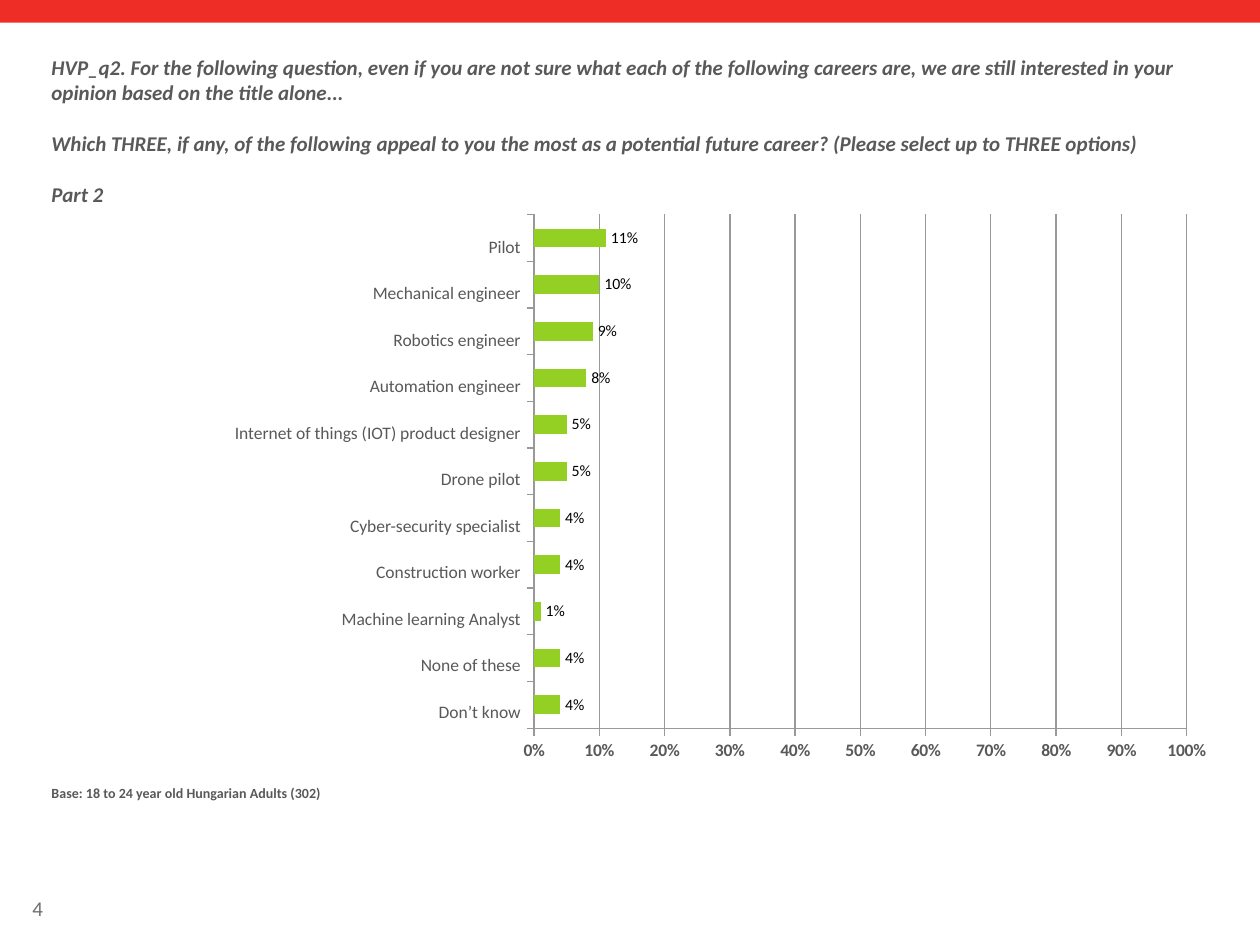
from collections import namedtuple

from lxml import etree
from pptx import Presentation
from pptx.chart.data import CategoryChartData
from pptx.dml.color import RGBColor
from pptx.enum.chart import XL_CHART_TYPE, XL_LABEL_POSITION, XL_TICK_LABEL_POSITION, XL_TICK_MARK
from pptx.enum.shapes import MSO_SHAPE
from pptx.enum.text import MSO_ANCHOR, PP_ALIGN
from pptx.oxml.ns import qn
from pptx.util import Inches, Pt

RED = RGBColor(0xEE, 0x2D, 0x27)
GREEN = RGBColor(0x93, 0xD0, 0x23)
TEXT_GREY = RGBColor(0x59, 0x59, 0x59)
NUMBER_GREY = RGBColor(0x6D, 0x6F, 0x71)
LINE_GREY = RGBColor(0x99, 0x99, 0x99)
BLACK = RGBColor(0, 0, 0)

Box = namedtuple("Box", "left top width height")

QUESTION = [
    "HVP_q2. For the following question, even if you are not sure what each of the "
    "following careers are, we are still interested in your opinion based on the title alone...",
    "Which THREE, if any, of the following appeal to you the most as a potential future "
    "career? (Please select up to THREE options)",
    "Part 2",
]
CAREERS = [
    ("Pilot", 0.11),
    ("Mechanical engineer", 0.10),
    ("Robotics engineer", 0.09),
    ("Automation engineer", 0.08),
    ("Internet of things (IOT) product designer", 0.05),
    ("Drone pilot", 0.05),
    ("Cyber-security specialist", 0.04),
    ("Construction worker", 0.04),
    ("Machine learning Analyst", 0.01),
    ("None of these", 0.04),
    ("Don’t know", 0.04),
]
PLOT_SHARES = {"x": 0.03, "y": 0.02, "w": 0.92, "h": 0.9}


def set_font(font, size, color, bold=False, italic=False, name="Calibri"):
    font.name = name
    font.size = Pt(size)
    font.bold = bold
    font.italic = italic
    font.color.rgb = color


def add_text(page, box, paragraphs, size, color=TEXT_GREY, bold=False, italic=False,
             align=PP_ALIGN.LEFT, anchor=MSO_ANCHOR.TOP, gap=0):
    frame = page.shapes.add_textbox(*map(Inches, box)).text_frame
    frame.word_wrap = True
    frame.vertical_anchor = anchor
    for index, text in enumerate(paragraphs):
        para = frame.add_paragraph() if index else frame.paragraphs[0]
        para.text = text
        para.alignment = align
        para.space_before = Pt(gap if index else 0)
        set_font(para.font, size, color, bold, italic)


def add_banner(page, box):
    banner = page.shapes.add_shape(MSO_SHAPE.RECTANGLE, *map(Inches, box))
    banner.shadow.inherit = False
    banner.fill.solid()
    banner.fill.fore_color.rgb = RED
    banner.line.fill.background()


def add_career_labels(page, box):
    row = box.height / len(CAREERS)
    for index, (career, _) in enumerate(CAREERS):
        cell = Box(box.left, box.top + index * row, box.width, row)
        add_text(page, cell, [career], 10, align=PP_ALIGN.RIGHT, anchor=MSO_ANCHOR.MIDDLE)


def fix_plot_area(chart):
    plot_area = chart.plots[0]._element.getparent()
    for old in plot_area.findall(qn("c:layout")):
        plot_area.remove(old)
    layout = etree.Element(qn("c:layout"))
    plot_area.insert(0, layout)
    manual = etree.SubElement(layout, qn("c:manualLayout"))
    settings = {"layoutTarget": "inner", "xMode": "edge", "yMode": "edge", **PLOT_SHARES}
    for tag, value in settings.items():
        etree.SubElement(manual, qn(f"c:{tag}")).set("val", str(value))


def add_career_chart(page, box):
    data = CategoryChartData(number_format="0%")
    data.categories = [str(number + 1) for number in range(len(CAREERS))]
    data.add_series("Series 1", [share for _, share in reversed(CAREERS)])
    chart = page.shapes.add_chart(XL_CHART_TYPE.BAR_CLUSTERED, *map(Inches, box), data).chart
    chart.has_legend = False
    chart.has_title = False
    set_font(chart.font, 18, NUMBER_GREY, name="Manrope")

    plot = chart.plots[0]
    plot.gap_width = 150
    plot.overlap = -10
    plot.vary_by_categories = False
    fill = plot.series[0].format.fill
    fill.solid()
    fill.fore_color.rgb = GREEN
    plot.has_data_labels = True
    labels = plot.data_labels
    labels.show_value = True
    labels.position = XL_LABEL_POSITION.OUTSIDE_END
    labels.number_format = "0%"
    labels.number_format_is_linked = False
    set_font(labels.font, 9, BLACK)

    categories, values = chart.category_axis, chart.value_axis
    for axis in (categories, values):
        axis.major_tick_mark = XL_TICK_MARK.OUTSIDE
        axis.minor_tick_mark = XL_TICK_MARK.NONE
        axis.format.line.color.rgb = LINE_GREY
        set_font(axis.tick_labels.font, 10, TEXT_GREY, bold=axis is values)
    categories.tick_label_position = XL_TICK_LABEL_POSITION.NONE
    values.tick_label_position = XL_TICK_LABEL_POSITION.LOW
    values.tick_labels.number_format = "0%"
    values.tick_labels.number_format_is_linked = False
    values.minimum_scale = 0
    values.maximum_scale = 1
    values.major_unit = 0.1
    values.has_major_gridlines = True
    values.major_gridlines.format.line.color.rgb = LINE_GREY
    fix_plot_area(chart)


def build_survey_page(page, box):
    def area(left, top, width, height):
        return Box(box.left + left * box.width, box.top + top * box.height,
                   width * box.width, height * box.height)

    margin, content = 0.031, 0.939
    label_left, label_width = 0.016, 0.407
    add_banner(page, area(0, 0, 1, 0.024))
    add_text(page, area(label_left, 0.941, 0.077, 0.04), ["4"], 12, NUMBER_GREY,
             anchor=MSO_ANCHOR.MIDDLE)
    add_text(page, area(margin, 0.051, content, 0.165), QUESTION, 12, bold=True,
             italic=True, gap=14.6)
    add_career_chart(page, area(0.407, 0.215, 0.563, 0.604))
    add_career_labels(page, area(label_left, 0.236, label_width, 0.541))
    add_text(page, area(margin, 0.824, content, 0.057),
             ["Base: 18 to 24 year old Hungarian Adults (302)"], 8, bold=True)


def main():
    deck = Presentation()
    deck.slide_width = Inches(10)
    deck.slide_height = Inches(7.5)
    page = deck.slides.add_slide(deck.slide_layouts[6])
    build_survey_page(page, Box(0, 0, 10, 7.5))
    deck.save("out.pptx")


if __name__ == "__main__":
    main()
